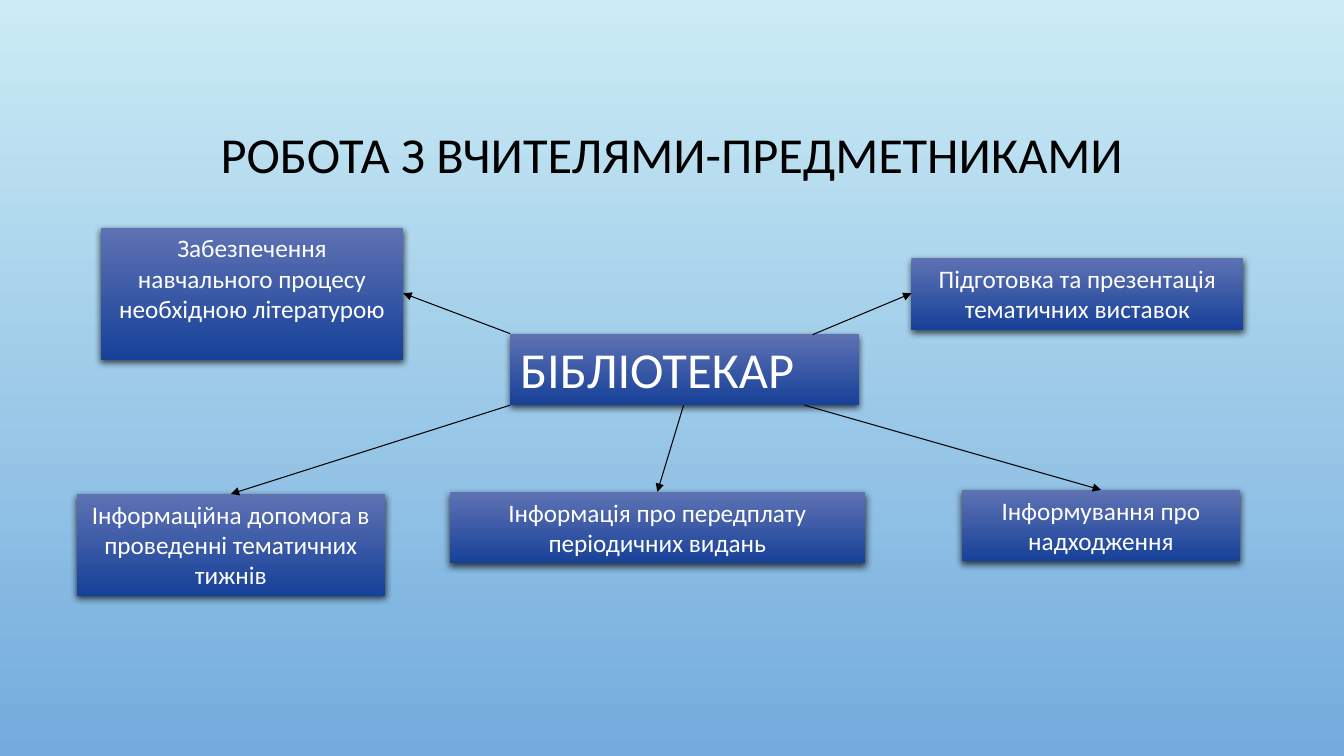
from pptx import Presentation
from pptx.dml.color import RGBColor
from pptx.enum.shapes import MSO_CONNECTOR, MSO_SHAPE
from pptx.enum.text import MSO_ANCHOR, MSO_AUTO_SIZE, PP_ALIGN
from pptx.oxml import parse_xml
from pptx.oxml.ns import nsdecls, qn
from pptx.util import Inches, Pt

RECT = MSO_SHAPE.RECTANGLE
LINE = MSO_CONNECTOR.STRAIGHT
TOP, MIDDLE = MSO_ANCHOR.TOP, MSO_ANCHOR.MIDDLE
LEFT, CENTER = PP_ALIGN.LEFT, PP_ALIGN.CENTER
FIXED, GROW = MSO_AUTO_SIZE.NONE, MSO_AUTO_SIZE.SHAPE_TO_FIT_TEXT

COLORS = {"sky": "CBECF5", "sea": "73ABDD", "light": "5E72B3",
          "deep": "174199", "black": "000000", "white": "FFFFFF"}


def shade(fill, first, last):
    """Fill from top to bottom with two colours."""
    fill.gradient()
    fill.gradient_angle = 270
    for stop, name in zip(fill.gradient_stops, (first, last)):
        stop.color.rgb = RGBColor.from_string(COLORS[name])


def write(shape, text, size, color, align, anchor, fit):
    """Set the text of a shape and its format."""
    frame = shape.text_frame
    frame.text = text
    frame.word_wrap = True
    frame.auto_size = fit
    frame.vertical_anchor = anchor
    para = frame.paragraphs[0]
    para.alignment = align
    font = para.runs[0].font
    font.name = "Calibri"
    font.size = Pt(size)
    font.color.rgb = RGBColor.from_string(COLORS[color])


prs = Presentation()
prs.slide_width, prs.slide_height = Inches(13.33), Inches(7.5)
slide = prs.slides.add_slide(prs.slide_layouts[5])
shade(slide.background.fill, "sky", "sea")

# Title
title = slide.shapes.title
title.left, title.top = Inches(1), Inches(0.68)
title.width, title.height = Inches(11.33), Inches(1.75)
write(title, "РОБОТА З ВЧИТЕЛЯМИ-ПРЕДМЕТНИКАМИ", 36, "black",
      CENTER, MIDDLE, FIXED)
title.text_frame.paragraphs[0].line_spacing = 0.9

# Librarian in the middle, tasks around
boxes = [
    ("БІБЛІОТЕКАР", 5.06, 3.31, 3.46, 0.71, 36, LEFT, GROW),
    ("Забезпечення навчального процесу необхідною літературою",
     1, 2.26, 3, 1.31, 18, CENTER, FIXED),
    ("Підготовка та презентація тематичних виставок",
     9.04, 2.56, 3.29, 0.71, 18, CENTER, GROW),
    ("Інформування про надходження",
     9.54, 4.86, 2.76, 0.71, 18, CENTER, GROW),
    ("Інформація про передплату періодичних видань",
     4.46, 4.88, 4.12, 0.71, 18, CENTER, GROW),
    ("Інформаційна допомога в проведенні тематичних тижнів",
     0.76, 4.9, 3.06, 1.01, 18, CENTER, GROW),
]
for text, x, y, w, h, size, align, fit in boxes:
    box = slide.shapes.add_shape(RECT, Inches(x), Inches(y),
                                 Inches(w), Inches(h))
    shade(box.fill, "light", "deep")
    box.line.fill.background()
    write(box, text, size, "white", align, TOP, fit)
    # Soft shadow below the box
    box.shadow.inherit = False
    box._element.spPr.find(qn("a:effectLst")).append(parse_xml(
        f'<a:outerShdw {nsdecls("a")} blurRad="{Pt(5)}" dist="{Pt(2)}" '
        f'dir="5400000" algn="ctr" rotWithShape="0">'
        f'<a:srgbClr val="{COLORS["black"]}"><a:alpha val="69000"/>'
        f'</a:srgbClr></a:outerShdw>'))

# Arrows from the librarian to each task
arrows = [
    (5.06, 3.31, 4, 2.91),
    (5.06, 4.02, 2.29, 4.9),
    (6.78, 4.02, 6.52, 4.88),
    (7.98, 4.02, 10.92, 4.86),
    (8.06, 3.32, 9.04, 2.91),
]
for ends in arrows:
    arrow = slide.shapes.add_connector(LINE, *map(Inches, ends))
    arrow.line.width = Pt(0.75)
    arrow.line.color.rgb = RGBColor.from_string(COLORS["black"])
    arrow.line._get_or_add_ln().append(
        parse_xml(f'<a:tailEnd {nsdecls("a")} type="triangle"/>'))
    arrow._element.spPr.append(parse_xml(f'<a:effectLst {nsdecls("a")}/>'))

prs.save("out.pptx")
